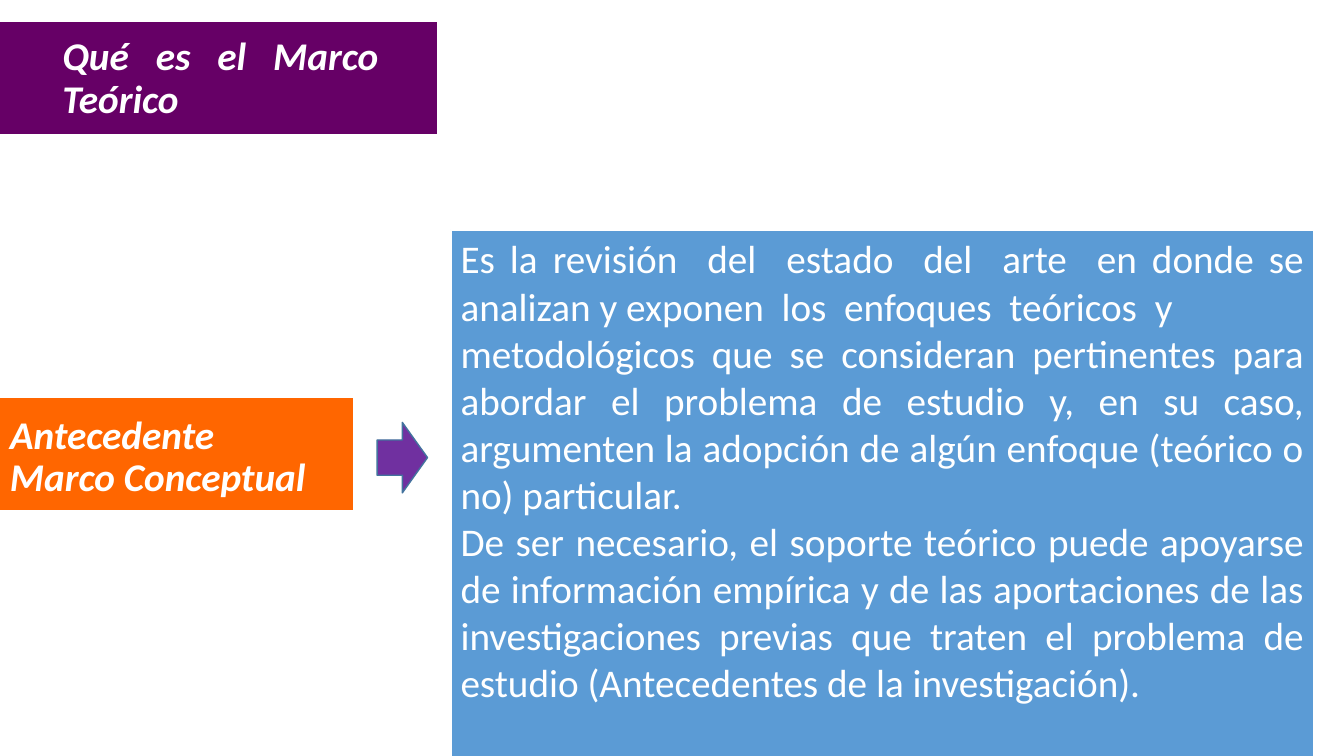
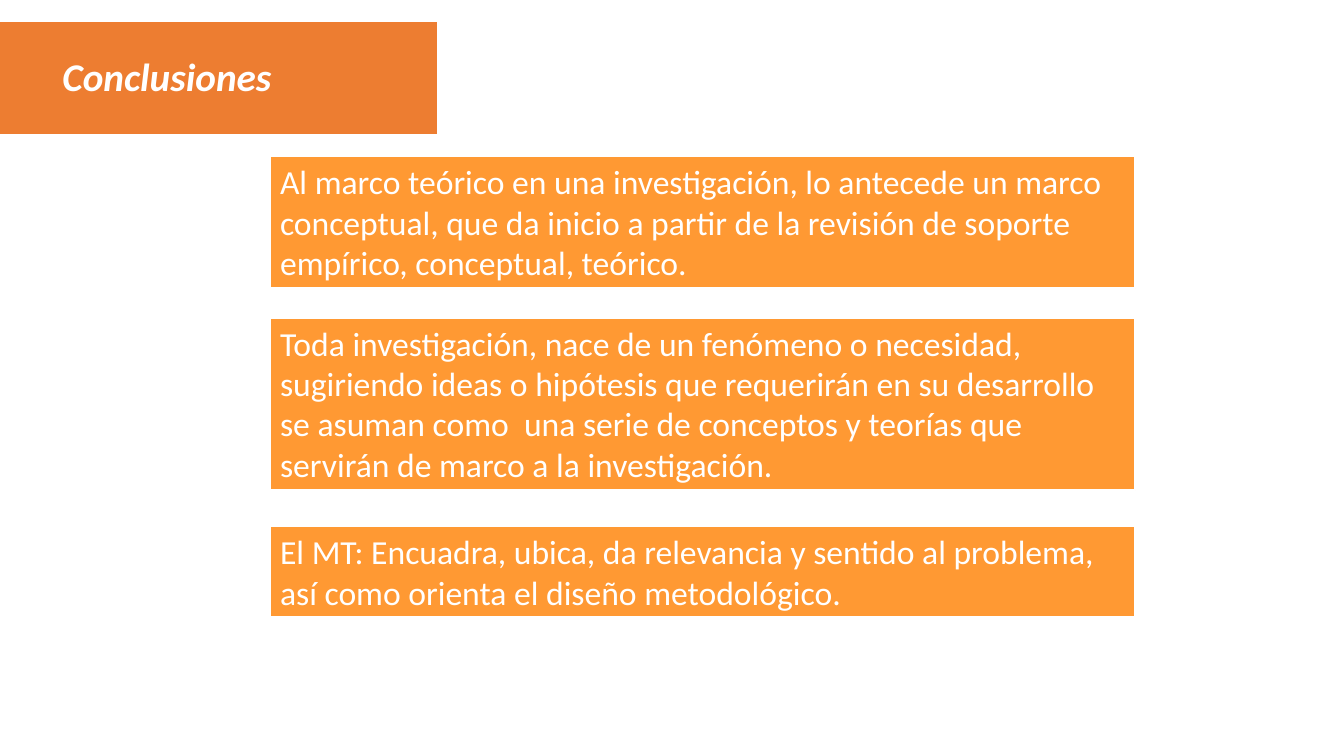
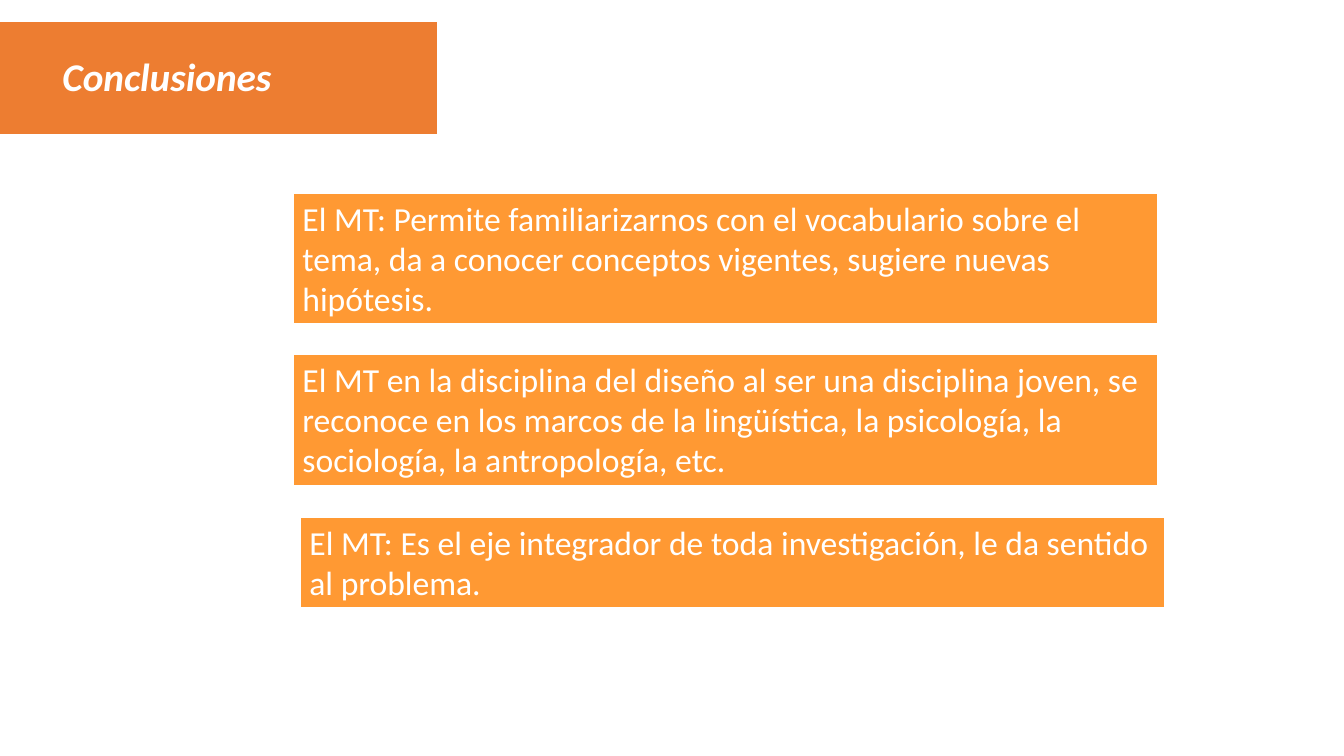
from collections import namedtuple

from pptx import Presentation
from pptx import util as u
from pptx.dml.color import RGBColor
from pptx.enum import shapes, text

WIDTH, HEIGHT = u.Inches(13.33), u.Inches(7.5)
COLUMN, ROW = WIDTH / 100, HEIGHT / 100

WHITE = RGBColor(0xFF, 0xFF, 0xFF)
PLUM = RGBColor(0x66, 0x00, 0x66)
VIOLET = RGBColor(0x70, 0x30, 0xA0)
STEEL = RGBColor(0x43, 0x73, 0x9E)
BLUE = RGBColor(0x5B, 0x9B, 0xD5)
VIVID_ORANGE = RGBColor(0xFF, 0x66, 0x00)
TITLE_ORANGE = RGBColor(0xED, 0x7D, 0x31)
CARD_ORANGE = RGBColor(0xFF, 0x99, 0x33)

FONT = "Calibri"
SHAPE = shapes.MSO_SHAPE
ALIGN = text.PP_ALIGN
ANCHOR = text.MSO_ANCHOR

Box = namedtuple("Box", "left top width height")
Card = namedtuple("Card", "left top lines words")

TITLE_BOX = Box(0, 2.93, 32.48, 14.8)
LABEL_BOX = Box(0, 52.67, 26.26, 14.8)
ARROW_BOX = Box(28.06, 55.87, 3.75, 9.33)
PANEL_BOX = Box(33.53, 30.4, 64.22, 70.4)
CARD_WIDTH = 64.37
CARD_PADDING, CARD_LINE = 1.33, 5.38

DEFINITION = [
    "Es la revisión  del  estado  del  arte  en donde se analizan y exponen"
    "  los  enfoques  teóricos  y",
    "metodológicos que se consideran pertinentes para abordar el problema de "
    "estudio y, en su caso, argumenten la adopción de algún enfoque (teórico o "
    "no) particular.",
    "De ser necesario, el soporte teórico puede apoyarse de información "
    "empírica y de las aportaciones de las investigaciones previas que traten "
    "el problema de estudio (Antecedentes de la investigación).",
]

CONCLUSIONS = [
    [
        Card(20.1, 20.67, 3,
             "Al marco teórico en una investigación, lo antecede un marco "
             "conceptual, que da inicio a partir de la revisión de soporte "
             "empírico, conceptual, teórico."),
        Card(20.1, 42, 4,
             "Toda investigación, nace de un fenómeno o necesidad, sugiriendo "
             "ideas o hipótesis que requerirán en su desarrollo se asuman "
             "como  una serie de conceptos y teorías que servirán de marco a "
             "la investigación."),
        Card(20.1, 69.6, 2,
             "El MT: Encuadra, ubica, da relevancia y sentido al problema, "
             "así como orienta el diseño metodológico."),
    ],
    [
        Card(21.76, 25.47, 3,
             "El MT: Permite familiarizarnos con el vocabulario sobre el "
             "tema, da a conocer conceptos vigentes, sugiere nuevas hipótesis."),
        Card(21.76, 46.8, 3,
             "El MT en la disciplina del diseño al ser una disciplina joven, "
             "se reconoce en los marcos de la lingüística, la psicología, la "
             "sociología, la antropología, etc."),
        Card(22.28, 68.4, 2,
             "El MT: Es el eje integrador de toda investigación, le da "
             "sentido al problema."),
    ],
]


def measure(box):
    return [round(size * unit) for size, unit in zip(box, (COLUMN, ROW, COLUMN, ROW))]


def part(box, left, top, width, height):
    return Box(box.left + left * box.width, box.top + top * box.height,
               width * box.width, height * box.height)


def add_block(page, kind, box, fill, line=None, weight=1):
    block = page.shapes.add_shape(kind, *measure(box))
    block.shadow.inherit = False
    block.fill.solid()
    block.fill.fore_color.rgb = fill
    if line is None:
        block.line.fill.background()
    else:
        block.line.color.rgb = line
        block.line.width = u.Pt(weight)
    return block


def write(holder, paragraphs, size, align, anchor=ANCHOR.TOP, heading=False):
    frame = holder.text_frame
    frame.word_wrap = True
    frame.auto_size = text.MSO_AUTO_SIZE.NONE
    frame.vertical_anchor = anchor
    frame.text = "\n".join(paragraphs)
    for para in frame.paragraphs:
        para.alignment = align
        para.font.name = FONT
        para.font.size = u.Pt(size)
        para.font.color.rgb = WHITE
        if heading:
            para.font.bold = para.font.italic = True
            para.line_spacing = 0.9


def write_heading(holder, lines):
    write(holder, lines, 28, ALIGN.JUSTIFY, ANCHOR.MIDDLE, heading=True)


def add_title(page, box, words, fill, lines):
    band = add_block(page, SHAPE.FLOWCHART_PROCESS, box, fill)
    title = page.shapes.title
    height = 0.1 + 0.38 * lines
    place = part(box, 0.12, 0.51 - height / 2, 0.77, height)
    title.left, title.top, title.width, title.height = measure(place)
    write_heading(title, [words])
    band.element.addnext(title.element)


def add_label(page, box, lines):
    add_block(page, SHAPE.FLOWCHART_PROCESS, box, VIVID_ORANGE)
    label = page.shapes.add_textbox(*measure(part(box, 0, 0.1, 0.95, 0.86)))
    write_heading(label, lines)


def add_panel(page, box, paragraphs, fill, size, align):
    panel = add_block(page, SHAPE.RECTANGLE, box, fill, WHITE, 1.5)
    write(panel, paragraphs, size, align)


def add_page(deck, title, fill, lines=1):
    page = deck.slides.add_slide(deck.slide_layouts.get_by_name("Title Only"))
    add_title(page, TITLE_BOX, title, fill, lines)
    return page


def add_definition_page(deck):
    page = add_page(deck, "Qué es el Marco Teórico", PLUM, lines=2)
    add_block(page, SHAPE.RIGHT_ARROW, ARROW_BOX, VIOLET, STEEL)
    add_panel(page, PANEL_BOX, DEFINITION, BLUE, 28, ALIGN.JUSTIFY)
    add_label(page, LABEL_BOX, ["Antecedente", "Marco Conceptual"])


def add_conclusions_page(deck, cards):
    page = add_page(deck, "Conclusiones", TITLE_ORANGE)
    for card in cards:
        height = CARD_PADDING + CARD_LINE * card.lines
        box = Box(card.left, card.top, CARD_WIDTH, height)
        add_panel(page, box, [card.words], CARD_ORANGE, 24, ALIGN.LEFT)


def main():
    deck = Presentation()
    deck.slide_width, deck.slide_height = WIDTH, HEIGHT
    add_definition_page(deck)
    for cards in CONCLUSIONS:
        add_conclusions_page(deck, cards)
    deck.save("out.pptx")


if __name__ == "__main__":
    main()
